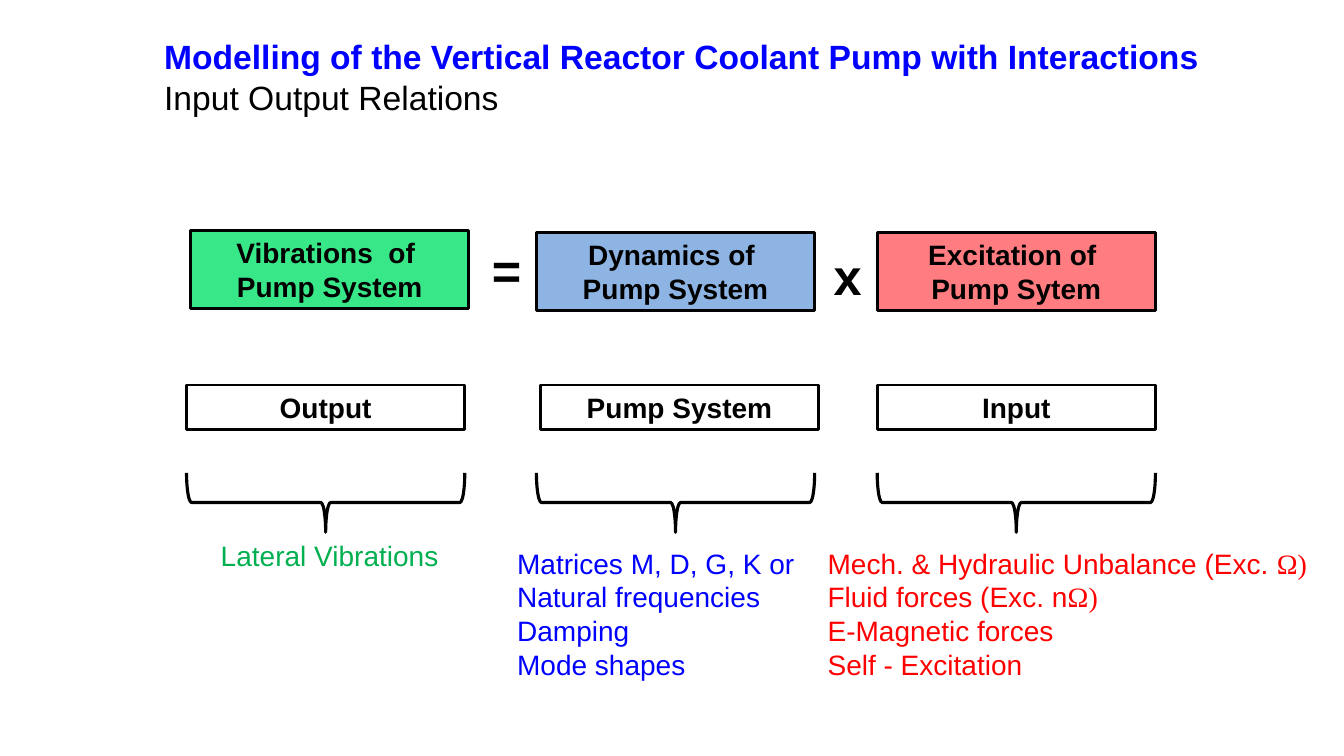
import pptx
import pptx.util
import pptx.dml.color
import pptx.enum.shapes
import pptx.enum.text

Inches = pptx.util.Inches
Pt = pptx.util.Pt
RGBColor = pptx.dml.color.RGBColor
SHAPE = pptx.enum.shapes.MSO_SHAPE
ALIGN = pptx.enum.text.PP_ALIGN
ANCHOR = pptx.enum.text.MSO_ANCHOR

BLACK = RGBColor(0x00, 0x00, 0x00)
BLUE = RGBColor(0x00, 0x00, 0xFF)
RED = RGBColor(0xFF, 0x00, 0x00)
GREEN = RGBColor(0x00, 0xB0, 0x50)
MINT = RGBColor(0x38, 0xE8, 0x88)
SKY = RGBColor(0x8E, 0xB4, 0xE3)
CORAL = RGBColor(0xFF, 0x7C, 0x80)

SANS = "Arial"
SERIF = "Times New Roman"
COLUMN_WIDTH = 2.76
BRACE_DEPTH = 0.59


def add_span(para, text, size, color, bold=False, font=SANS):
    span = para.add_run()
    span.text = text
    span.font.name = font
    span.font.size = Pt(size)
    span.font.bold = bold
    span.font.color.rgb = color


def write_lines(box, lines, size, color, bold=False, align=ALIGN.LEFT):
    frame = box.text_frame
    for index, line in enumerate(lines):
        para = frame.paragraphs[0] if index == 0 else frame.add_paragraph()
        para.alignment = align
        for text, font in line:
            add_span(para, text, size, color, bold, font)


def plain(*texts):
    return [[(text, SANS)] for text in texts]


def add_text(page, left, top, width, height, lines, size, color,
             bold=False, align=ALIGN.LEFT):
    box = page.shapes.add_textbox(Inches(left), Inches(top), Inches(width), Inches(height))
    box.text_frame.word_wrap = True
    write_lines(box, lines, size, color, bold, align)
    return box


def add_block(page, left, top, height, lines, fill=None):
    box = page.shapes.add_shape(SHAPE.RECTANGLE, Inches(left), Inches(top),
                                Inches(COLUMN_WIDTH), Inches(height))
    box.shadow.inherit = False
    if fill is None:
        box.fill.background()
    else:
        box.fill.solid()
        box.fill.fore_color.rgb = fill
    box.line.color.rgb = BLACK
    box.line.width = Pt(2)
    box.text_frame.word_wrap = True
    box.text_frame.vertical_anchor = ANCHOR.TOP
    write_lines(box, lines, 20, BLACK, True, ALIGN.CENTER)


def add_brace(page, left, top):
    overhang = (COLUMN_WIDTH - BRACE_DEPTH) / 2
    brace = page.shapes.add_shape(SHAPE.RIGHT_BRACE, Inches(left + overhang),
                                  Inches(top - overhang), Inches(BRACE_DEPTH),
                                  Inches(COLUMN_WIDTH))
    brace.rotation = 90
    brace.shadow.inherit = False
    brace.fill.background()
    brace.line.color.rgb = BLACK
    brace.line.width = Pt(2.25)


def add_title(page, left, top, width, height):
    box = page.shapes.add_textbox(Inches(left), Inches(top), Inches(width), Inches(height))
    frame = box.text_frame
    frame.word_wrap = False
    add_span(frame.paragraphs[0],
             "Modelling of the Vertical Reactor Coolant Pump with Interactions",
             24, BLUE, True)
    add_span(frame.add_paragraph(), "Input Output Relations", 24, BLACK)


def add_column(page, left, top, term, fill, role, term_shift=(0, 0), role_shift=0):
    across, down = term_shift
    add_block(page, left + across, top + down, 0.77, plain(*term), fill)
    add_block(page, left + role_shift, top + 1.51, 0.44, plain(role))
    add_brace(page, left, top + 2.38)


def add_operator(page, left, top, sign):
    add_text(page, left, top, 0.45, 0.71, plain(sign), 36, BLACK, True, ALIGN.CENTER)


def add_equation(page, top):
    add_column(page, 1.85, top, ("Vibrations  of ", "Pump System"), MINT, "Output",
               term_shift=(0.04, -0.02))
    add_operator(page, 4.78, top + 0.01, "=")
    add_column(page, 5.32, top, ("Dynamics of ", "Pump System"), SKY, "Pump System",
               role_shift=0.04)
    add_operator(page, 8.17, top + 0.07, "x")
    add_column(page, 8.7, top, ("Excitation of ", "Pump Sytem"), CORAL, "Input")


def add_details(page, top):
    add_text(page, 1.85, top, 2.84, 0.44, plain("Lateral Vibrations"), 20, GREEN,
             align=ALIGN.CENTER)
    add_text(page, 5.03, top + 0.08, 3.15, 1.45,
             plain("Matrices M, D, G, K or", "Natural frequencies", "Damping",
                   "Mode shapes"), 20, BLUE)
    forces = [
        [("Mech. & Hydraulic Unbalance (Exc. ", SANS), ("Ω)", SERIF)],
        [("Fluid forces (Exc. n", SANS), ("Ω)", SERIF)],
    ] + plain("E-Magnetic forces", "Self - Excitation")
    add_text(page, 8.11, top + 0.08, 5.06, 1.45, forces, 20, RED)


def main():
    deck = pptx.Presentation()
    deck.slide_width = Inches(13.33)
    deck.slide_height = Inches(7.5)
    page = deck.slides.add_slide(deck.slide_layouts[6])
    add_title(page, 1.53, 0.31, 10.55, 0.91)
    add_equation(page, 2.31)
    add_details(page, 5.29)
    deck.save("out.pptx")


if __name__ == "__main__":
    main()
